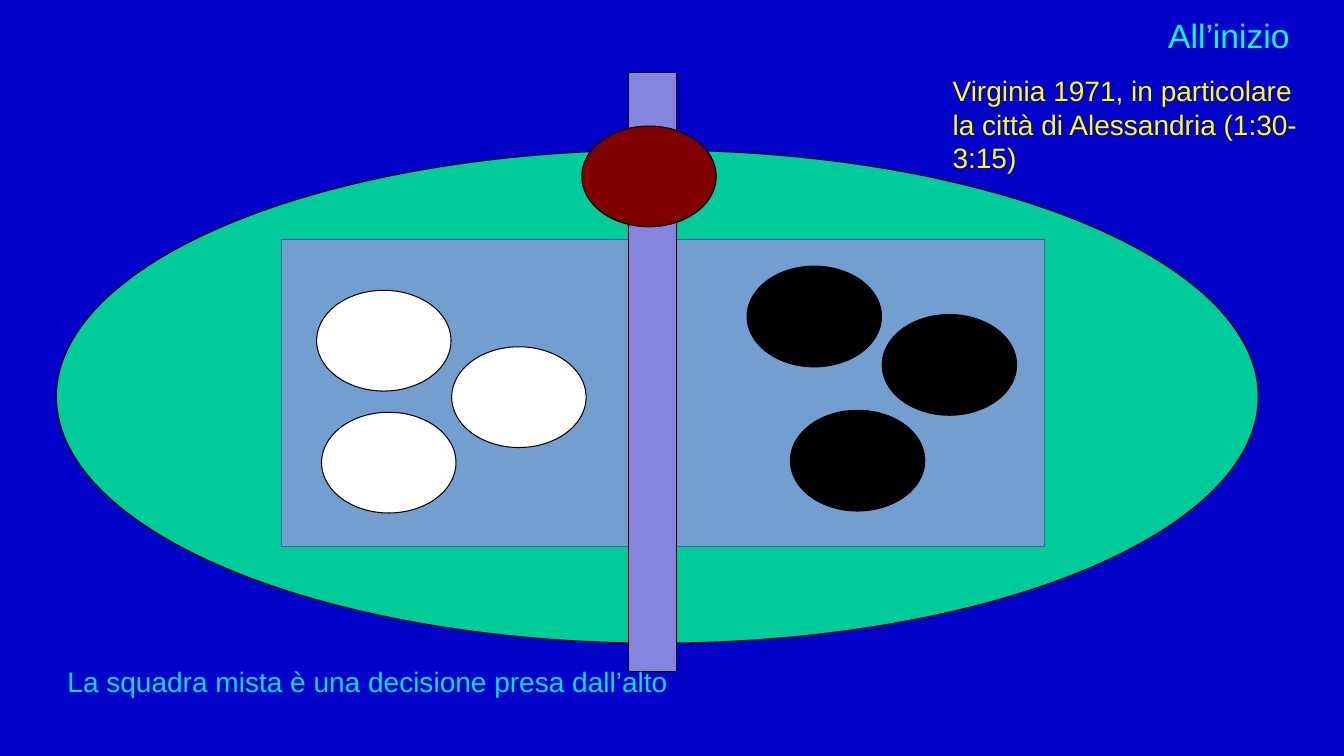
from pptx import Presentation
from pptx import util as u
from pptx.dml.color import RGBColor
from pptx.enum import shapes, text

WIDTH, HEIGHT = u.Inches(13.33), u.Inches(7.5)
COLORS = {
    "background": "0000C8", "title": "00FFFF", "note": "FFFF00", "caption": "00E1DC",
    "field": "00CC99", "team": "729FCF", "team_line": "3465A4", "divider": "8585E0",
    "coach": "800000", "white": "FFFFFF", "black": "000000",
}
PLAYER_SIZE = (10, 13.33)
PLAYERS = {
    "white": [(33.61, 45.87), (23.93, 54.53), (23.56, 38.4)],
    "black": [(65.64, 41.6), (58.81, 54.27), (55.59, 35.2)],
}
OVAL = shapes.MSO_SHAPE.OVAL
RECTANGLE = shapes.MSO_SHAPE.RECTANGLE


def color(name):
    """Return the named colour."""
    return RGBColor.from_string(COLORS[name])


def box(left, top, width, height):
    """Turn percentages of the slide into lengths."""
    return (int(WIDTH * left / 100), int(HEIGHT * top / 100),
            int(WIDTH * width / 100), int(HEIGHT * height / 100))


def add_figure(slide, kind, area, fill, line="black"):
    """Add a filled, outlined shape."""
    sp = slide.shapes.add_shape(kind, *box(*area))
    sp.shadow.inherit = False
    sp.fill.solid()
    sp.fill.fore_color.rgb = color(fill)
    sp.line.color.rgb = color(line)
    sp.line.width = u.Pt(0.75)


def write(sp, words, size, name, align=text.PP_ALIGN.LEFT, anchor=text.MSO_ANCHOR.TOP):
    """Fill a shape with one formatted paragraph."""
    tf = sp.text_frame
    tf.word_wrap = True
    tf.auto_size = text.MSO_AUTO_SIZE.NONE
    tf.vertical_anchor = anchor
    p = tf.paragraphs[0]
    p.text = words
    p.alignment = align
    p.font.name = "Arial"
    p.font.size = u.Pt(size)
    p.font.color.rgb = color(name)


def add_title(slide, area, words):
    """Place and format the title placeholder."""
    sp = slide.shapes.title
    sp.left, sp.top, sp.width, sp.height = box(*area)
    write(sp, words, 24, "title", text.PP_ALIGN.RIGHT, text.MSO_ANCHOR.MIDDLE)


def add_text(slide, area, words, name):
    """Add a wrapped text box."""
    write(slide.shapes.add_textbox(*box(*area)), words, 20, name)


def main():
    """Build the slide and save it."""
    prs = Presentation()
    prs.slide_width, prs.slide_height = WIDTH, HEIGHT
    slide = prs.slides.add_slide(prs.slide_layouts[5])
    slide.background.fill.solid()
    slide.background.fill.fore_color.rgb = color("background")

    add_title(slide, (13.28, 0, 83.42, 9.33), "All’inizio")
    add_figure(slide, OVAL, (4.2, 19.87, 89.42, 65.2), "field")
    add_figure(slide, RECTANGLE, (20.93, 31.73, 56.79, 40.53), "team", "team_line")
    for name, places in PLAYERS.items():
        for place in places:
            add_figure(slide, OVAL, place + PLAYER_SIZE, name)
    add_figure(slide, RECTANGLE, (46.74, 9.6, 3.6, 79.2), "divider")
    add_text(slide, (70.14, 9.07, 27.61, 19.2),
             "Virginia 1971, in particolare la città di Alessandria (1:30-3:15)", "note")
    add_figure(slide, OVAL, (43.29, 16.67) + PLAYER_SIZE, "coach")
    add_text(slide, (4.28, 87.2, 91.97, 5.87),
             "La squadra mista è una decisione presa dall’alto", "caption")
    prs.save("out.pptx")


if __name__ == "__main__":
    main()
